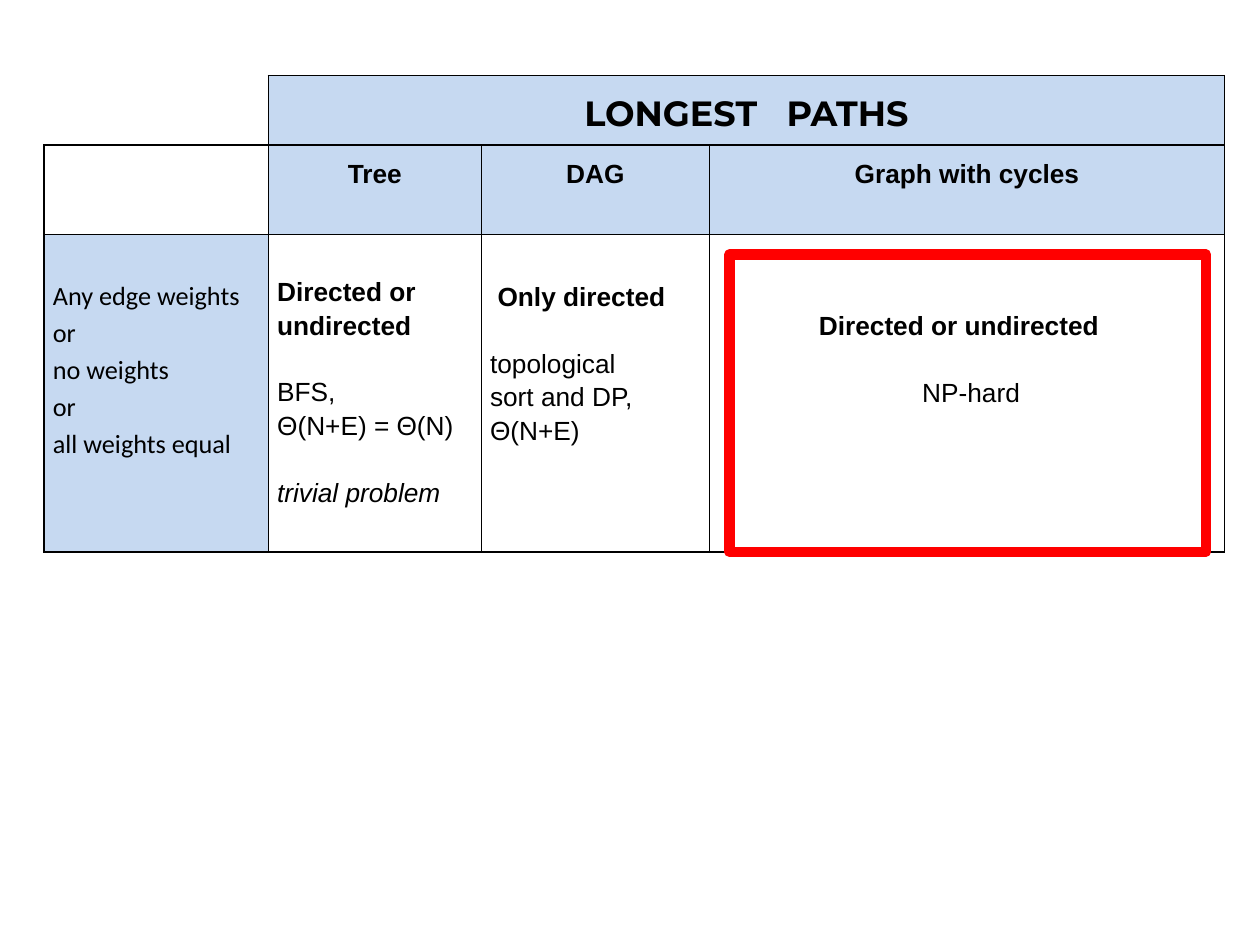
from dataclasses import dataclass
from lxml import etree
from pptx import Presentation
from pptx.dml.color import RGBColor
from pptx.enum.shapes import MSO_SHAPE
from pptx.enum.text import PP_ALIGN
from pptx.oxml.ns import qn
from pptx.slide import Slide
from pptx.util import Inches, Pt

BOX = MSO_SHAPE.RECTANGLE
LEFT, MID = PP_ALIGN.LEFT, PP_ALIGN.CENTER
BLACK = RGBColor(0, 0, 0)
WHITE = RGBColor(255, 255, 255)
BLUE = RGBColor(0xC6, 0xD9, 0xF1)
RED = RGBColor(255, 0, 0)
SIDES = ("lnL", "lnR", "lnT", "lnB")
COLS = (1.78, 1.69, 1.81, 4.09)
ROWS = (0.55, 0.71, 2.52)
GAP = 19


def write(para, text, font="Arial", size=15, bold=False, italic=False,
          align=LEFT, before=0, indent=0, track=0):
    para.alignment = align
    para.line_spacing = 1.15
    para.space_before = Pt(before)
    if indent:
        props = para._p.get_or_add_pPr()
        props.set("marL", str(Inches(indent)))
        props.set("indent", "0")
    parts = text.partition(" ") if track else (text,)
    for part in parts:
        run = para.add_run()
        run.text = part
        run.font.name = font
        run.font.size = Pt(size)
        run.font.bold = bold
        run.font.italic = italic
        run.font.color.rgb = BLACK
        if part == " ":
            run.font._element.set("spc", str(track * 100))


@dataclass
class Page:
    slide: Slide
    edge: RGBColor = BLACK
    width: float = 1

    def grid(self, left, top, cols, rows):
        frame = self.slide.shapes.add_table(
            len(rows), len(cols), Inches(left), Inches(top),
            Inches(sum(cols)), Inches(sum(rows)))
        table = frame.table
        table.first_row = table.horz_banding = False
        for col, size in zip(table.columns, cols):
            col.width = Inches(size)
        for row, size in zip(table.rows, rows):
            row.height = Inches(size)
        return table

    def cell(self, cell, fill, lines=(), top=0.08, white=()):
        cell.margin_left = cell.margin_right = Inches(0.07)
        cell.margin_top, cell.margin_bottom = Inches(top), Inches(0.08)
        props = cell._tc.get_or_add_tcPr()
        for side in SIDES:
            line = etree.SubElement(props, qn(f"a:{side}"), w=str(Pt(self.width)))
            solid = etree.SubElement(line, qn("a:solidFill"))
            tint = WHITE if side in white else self.edge
            etree.SubElement(solid, qn("a:srgbClr"), val=str(tint))
        cell.fill.solid()
        cell.fill.fore_color.rgb = fill
        frame = cell.text_frame
        for i, (text, style) in enumerate(lines):
            para = frame.add_paragraph() if i else frame.paragraphs[0]
            write(para, text, **style)

    def frame(self, left, top, width, height, color, weight):
        shape = self.slide.shapes.add_shape(
            BOX, Inches(left), Inches(top), Inches(width), Inches(height))
        shape.shadow.inherit = False
        shape.fill.background()
        shape.line.color.rgb = color
        shape.line.width = Pt(weight)


def main():
    deck = Presentation()
    deck.slide_width, deck.slide_height = Inches(10), Inches(7.5)
    page = Page(deck.slides.add_slide(deck.slide_layouts[6]))
    table = page.grid(0.35, 0.6, COLS, ROWS)
    table.cell(0, 1).merge(table.cell(0, 3))

    page.cell(table.cell(0, 0), WHITE, white=("lnL", "lnT"))
    title = dict(font="Montserrat", size=20, bold=True, align=MID, track=11)
    page.cell(table.cell(0, 1), BLUE, [("LONGEST PATHS", title)])
    for col in (2, 3):
        page.cell(table.cell(0, col), BLUE)

    page.cell(table.cell(1, 0), WHITE)
    head = dict(bold=True, align=MID)
    for col, name in enumerate(("Tree", "DAG", "Graph with cycles"), 1):
        page.cell(table.cell(1, col), BLUE, [(name, head)])

    kinds = ("Any edge weights", "or", "no weights", "or", "all weights equal")
    page.cell(table.cell(2, 0), BLUE,
              [(kind, dict(font="Calibri")) for kind in kinds], top=0.33)
    tree = [("Directed or undirected", dict(bold=True)),
            ("BFS,", dict(before=GAP)),
            ("Θ(N+E) = Θ(N)", {}),
            ("trivial problem", dict(italic=True, before=GAP))]
    dag = [("Only directed", dict(bold=True, indent=0.06)),
           ("topological", dict(before=GAP)),
           ("sort and DP,", {}),
           ("Θ(N+E)", {})]
    graph = [("Directed or undirected", dict(bold=True, indent=0.8)),
             ("NP-hard", dict(indent=1.62, before=GAP))]
    for col, (lines, top) in enumerate(
            ((tree, 0.31), (dag, 0.35), (graph, 0.58)), 1):
        page.cell(table.cell(2, col), WHITE, lines, top=top)

    page.frame(5.79, 2.02, 3.78, 2.36, RED, 6)
    deck.save("out.pptx")


if __name__ == "__main__":
    main()
